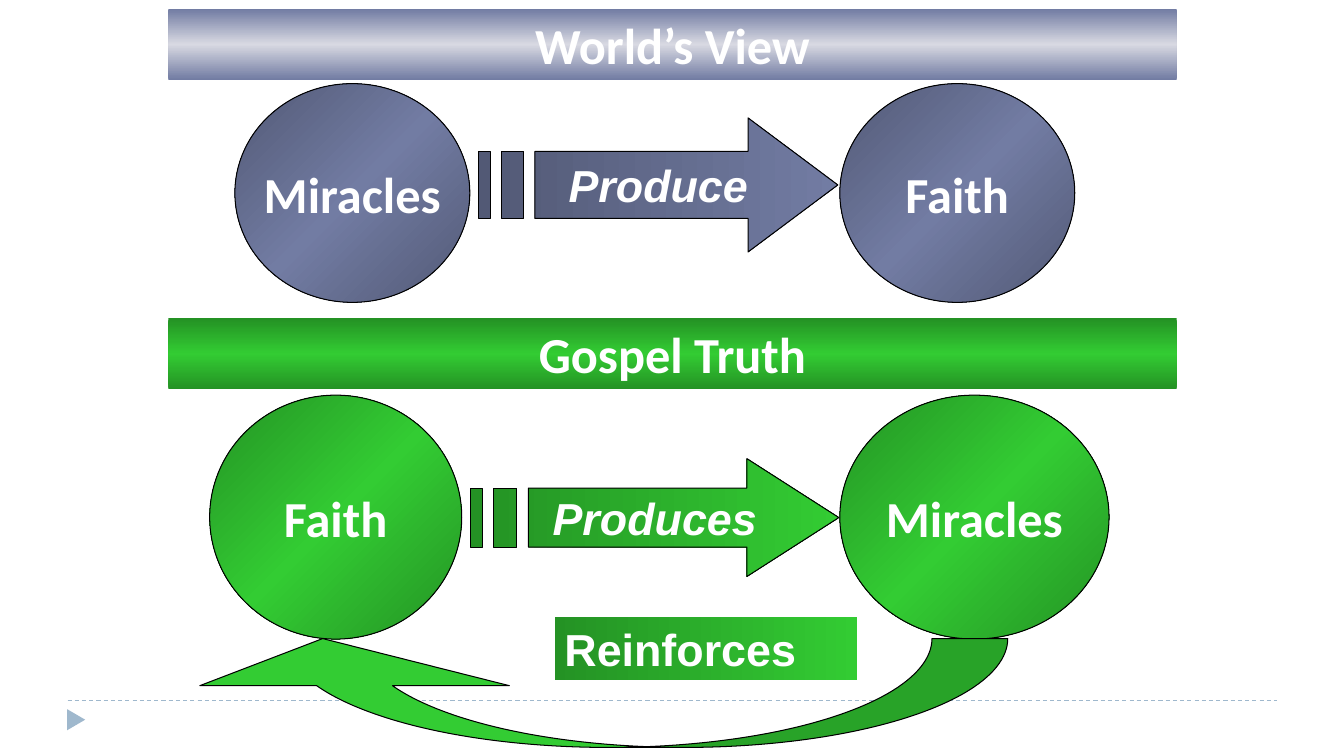
from lxml import etree
from pptx import Presentation
from pptx import util as u
from pptx.dml.color import RGBColor
from pptx.enum import dml, shapes, text
from pptx.oxml.ns import qn

deck = Presentation()
deck.slide_width, deck.slide_height = u.Inches(13.33), u.Inches(7.5)
slide = deck.slides.add_slide(deck.slide_layouts[6])
kind = shapes.MSO_SHAPE


def paint(shape, tones, angle=0, edge=True):
    shape.shadow.inherit = False
    if len(tones) == 1:
        shape.fill.solid()
        shape.fill.fore_color.rgb = RGBColor.from_string(tones[0])
    else:
        shape.fill.gradient()
        grad = shape._element.spPr.find(qn("a:gradFill"))
        stops = grad.find(qn("a:gsLst"))
        for old in list(stops):
            stops.remove(old)
        for i, tone in enumerate(tones):
            stop = etree.SubElement(stops, qn("a:gs"), pos=str(100000 * i // (len(tones) - 1)))
            etree.SubElement(stop, qn("a:srgbClr"), val=tone)
        grad.find(qn("a:lin")).set("ang", str(angle * 60000))
    if edge:
        shape.line.color.rgb = RGBColor.from_string("000000")
        shape.line.width = u.Pt(0.75)
    else:
        shape.line.fill.background()


def write(shape, words, size, font, slant=False, bar=False, align=text.PP_ALIGN.CENTER):
    frame = shape.text_frame
    frame.word_wrap = bar
    if bar:
        frame.auto_size = text.MSO_AUTO_SIZE.SHAPE_TO_FIT_TEXT
    frame.vertical_anchor = text.MSO_ANCHOR.TOP if bar else text.MSO_ANCHOR.MIDDLE
    para = frame.paragraphs[0]
    para.alignment = align
    run = para.add_run()
    run.text = words
    run.font.size, run.font.name = u.Pt(size), font
    run.font.bold = True
    run.font.italic = slant
    run.font.color.rgb = RGBColor.from_string("FFFFFF")


rule = slide.shapes.add_connector(shapes.MSO_CONNECTOR.STRAIGHT, u.Inches(0.67), u.Inches(6.95),
                                  u.Inches(12.67), u.Inches(6.95))
rule.line.color.rgb = RGBColor.from_string("9FB8CD")
rule.line.width = u.Pt(0.75)
rule.line.dash_style = dml.MSO_LINE.DASH
etree.SubElement(rule._element.spPr, qn("a:effectLst"))

mark = slide.shapes.add_shape(kind.ISOSCELES_TRIANGLE, u.Inches(0.65), u.Inches(7.05),
                              u.Inches(0.21), u.Inches(0.18))
mark.rotation = 90
paint(mark, ["9FB8CD"], edge=False)

blue, green = ("525975", "727CA3"), ("249224", "33CC33")
views = [
    ("World’s View", 0.09, ["727CA3", "D8D9E2", "727CA3"], blue,
     [("Miracles", 2.33, 0.83, 2.33, 2.17), ("Faith", 8.33, 0.83, 2.33, 2.17)],
     ("Produce", 4.75, 1.17, 3.56, 1.33)),
    ("Gospel Truth", 3.16, ["249224", "33CC33", "249224"], green,
     [("Faith", 2.08, 3.92, 2.5, 2.42), ("Miracles", 8.33, 3.92, 2.67, 2.42)],
     ("Produces", 4.67, 4.55, 3.65, 1.17)),
]
parts = [
    [(3 / 4, 0), (3 / 4, 1 / 4), (5 / 32, 1 / 4), (5 / 32, 3 / 4), (3 / 4, 3 / 4), (3 / 4, 1), (1, 1 / 2)],
    [(1 / 16, 1 / 4), (1 / 16, 3 / 4), (1 / 8, 3 / 4), (1 / 8, 1 / 4)],
    [(0, 1 / 4), (0, 3 / 4), (1 / 32, 3 / 4), (1 / 32, 1 / 4)],
]

for title, top, band, (dark, light), discs, (verb, x, y, wide, high) in views:
    bar = slide.shapes.add_shape(kind.RECTANGLE, u.Inches(1.67), u.Inches(top), u.Inches(10), u.Inches(0.7))
    paint(bar, band, 90, edge=False)
    write(bar, title, 36, "Calibri", bar=True)

    for word, *box in discs:
        disc = slide.shapes.add_shape(kind.OVAL, *map(u.Inches, box))
        paint(disc, [dark, light, dark], 45)
        write(disc, word, 36, "Calibri")

    pen = None
    for part in parts:
        spots = [(u.Inches(x + wide * a), u.Inches(y + high * b)) for a, b in part]
        if pen is None:
            pen = slide.shapes.build_freeform(*spots[0])
        else:
            pen.move_to(*spots[0])
        pen.add_line_segments(spots[1:], close=True)
    arrow = pen.convert_to_shape()
    paint(arrow, [dark, light])
    write(arrow, verb, 32, "Arial", slant=True)

loop = slide.shapes.add_shape(kind.CURVED_LEFT_ARROW, u.Inches(5.29), u.Inches(2.71),
                              u.Inches(1.08), u.Inches(8.33))
loop.rotation = 90
for i, value in enumerate([0.696, 2.843, 0.433]):
    loop.adjustments[i] = value
paint(loop, ["33CC33"])

label = slide.shapes.add_shape(kind.RECTANGLE, u.Inches(5.5), u.Inches(6.12), u.Inches(3), u.Inches(0.63))
paint(label, green, edge=False)
write(label, "Reinforces", 32, "Arial", bar=True, align=text.PP_ALIGN.LEFT)

deck.save("out.pptx")
